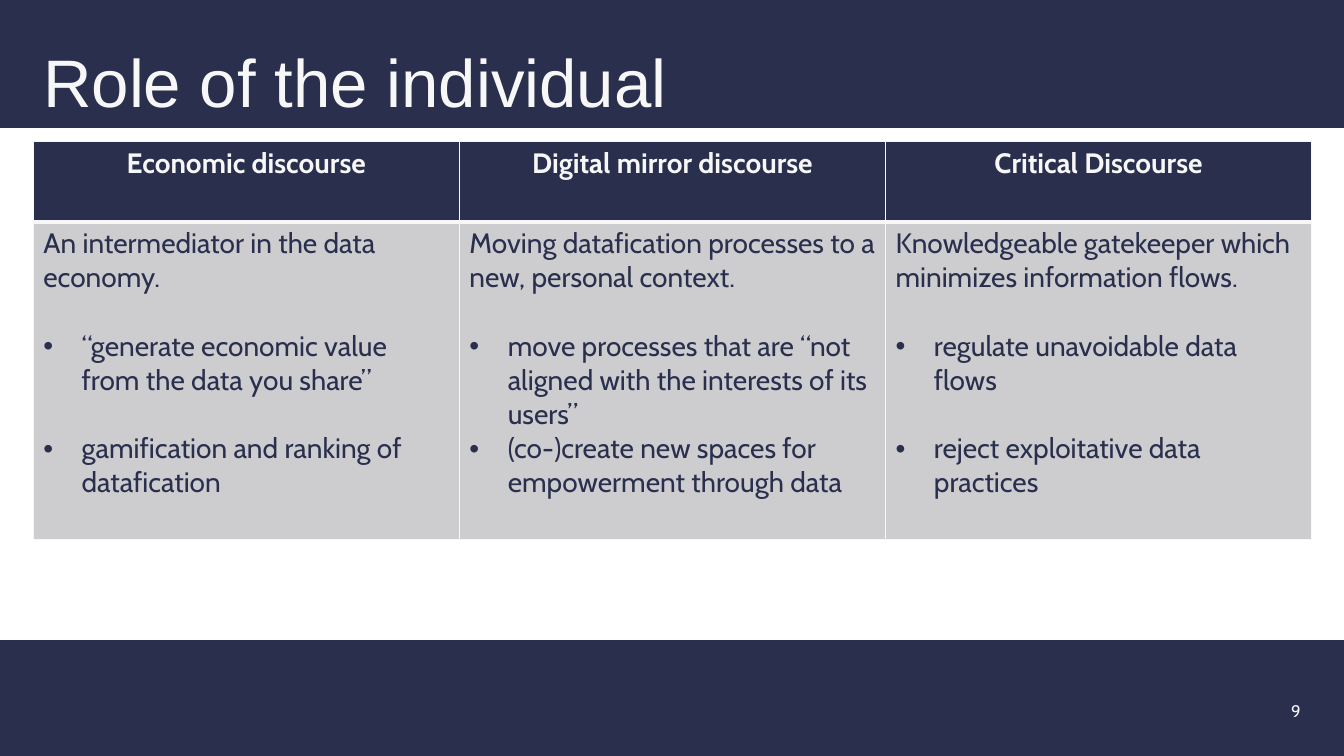
"""Build the slide comparing the role of the individual in three discourses."""
from lxml.etree import SubElement
from pptx import Presentation
from pptx.dml.color import RGBColor
from pptx.enum.shapes import MSO_SHAPE
from pptx.enum.text import MSO_ANCHOR, PP_ALIGN
from pptx.oxml.ns import qn
from pptx.util import Inches, Pt

NAVY = RGBColor(0x29, 0x2F, 0x4D)
OFF_WHITE = RGBColor(0xF7, 0xF7, 0xF7)
GREY = RGBColor(0xCD, 0xCD, 0xD0)

BODY_SIZE = 20
LINE_GAP = Pt(24.3)
BULLET_INDENT = Inches(0.38)

DISCOURSES = [
    ("Economic discourse", "An intermediator in the data economy.",
     [("“generate economic value from the data you share”", LINE_GAP),
      ("gamification and ranking of datafication", LINE_GAP)]),
    ("Digital mirror discourse",
     "Moving datafication processes to a new, personal context.",
     [("move processes that are “not aligned with the interests of its users”", LINE_GAP),
      ("(co-)create new spaces for empowerment through data", Pt(0))]),
    ("Critical Discourse",
     "Knowledgeable gatekeeper which minimizes information flows.",
     [("regulate unavoidable data flows", LINE_GAP),
      ("reject exploitative data practices", LINE_GAP)]),
]


def write(paragraph, text, size, color, font="Cabin", bold=False):
    """Put formatted text into a paragraph."""
    paragraph.text = text
    for run in paragraph.runs:
        run.font.name = font
        run.font.size = Pt(size)
        run.font.bold = bold
        run.font.color.rgb = color


def add_band(slide, top, height):
    """Add a full-width navy band."""
    shape = slide.shapes.add_shape(
        MSO_SHAPE.RECTANGLE, 0, Inches(top), Inches(13.33), Inches(height))
    shape.shadow.inherit = False
    shape.fill.solid()
    shape.fill.fore_color.rgb = NAVY
    shape.line.fill.background()


def add_label(slide, left, top, width, height, text, size, font="Cabin"):
    """Add a bottom-anchored text box and return its paragraph."""
    text_frame = slide.shapes.add_textbox(
        Inches(left), Inches(top), Inches(width), Inches(height)).text_frame
    text_frame.word_wrap = True
    text_frame.vertical_anchor = MSO_ANCHOR.BOTTOM
    paragraph = text_frame.paragraphs[0]
    write(paragraph, text, size, OFF_WHITE, font)
    return paragraph


def add_bullet(text_frame, text, gap):
    """Append a bulleted paragraph with a gap above it."""
    paragraph = text_frame.add_paragraph()
    properties = paragraph._p.get_or_add_pPr()
    properties.set("marL", str(BULLET_INDENT))
    properties.set("indent", str(-BULLET_INDENT))
    SubElement(properties, qn("a:buFont"), typeface="Arial")
    SubElement(properties, qn("a:buChar"), char="•")
    paragraph.space_before = gap
    write(paragraph, text, BODY_SIZE, NAVY)


def style_cell(cell, fill, top=1, bottom=1):
    """Give a cell its borders and fill."""
    properties = cell._tc.get_or_add_tcPr()
    for side, width in (("L", 1), ("R", 1), ("T", top), ("B", bottom)):
        line = SubElement(properties, qn(f"a:ln{side}"), w=str(Pt(width)))
        solid = SubElement(line, qn("a:solidFill"))
        SubElement(solid, qn("a:srgbClr"), val=str(OFF_WHITE))
    cell.fill.solid()
    cell.fill.fore_color.rgb = fill


def add_discourse_table(slide):
    """Add the table with one column for each discourse."""
    table = slide.shapes.add_table(
        2, len(DISCOURSES), Inches(0.33), Inches(1.4),
        Inches(12.68), Inches(3.95)).table
    table.rows[0].height = Inches(0.8)
    table.rows[1].height = Inches(3.15)
    for column, (heading, summary, bullets) in enumerate(DISCOURSES):
        header, body = table.cell(0, column), table.cell(1, column)
        style_cell(header, NAVY, bottom=3)
        style_cell(body, GREY, top=3)
        paragraph = header.text_frame.paragraphs[0]
        paragraph.alignment = PP_ALIGN.CENTER
        write(paragraph, heading, BODY_SIZE, OFF_WHITE, bold=True)
        write(body.text_frame.paragraphs[0], summary, BODY_SIZE, NAVY)
        for text, gap in bullets:
            add_bullet(body.text_frame, text, gap)


def main():
    """Build and save the presentation."""
    presentation = Presentation()
    presentation.slide_width = Inches(13.33)
    presentation.slide_height = Inches(7.5)
    slide = presentation.slides.add_slide(presentation.slide_layouts[6])
    add_band(slide, 6.35, 1.15)
    add_band(slide, 0, 1.27)
    title = add_label(slide, 0.33, 0.19, 12.09, 1.07,
                      "Role of the individual", 48, "Arial")
    title.line_spacing = 0.9
    number = add_label(slide, 12.3, 6.78, 0.7, 0.42, "9", 12)
    number.alignment = PP_ALIGN.RIGHT
    add_discourse_table(slide)
    presentation.save("out.pptx")


if __name__ == "__main__":
    main()
